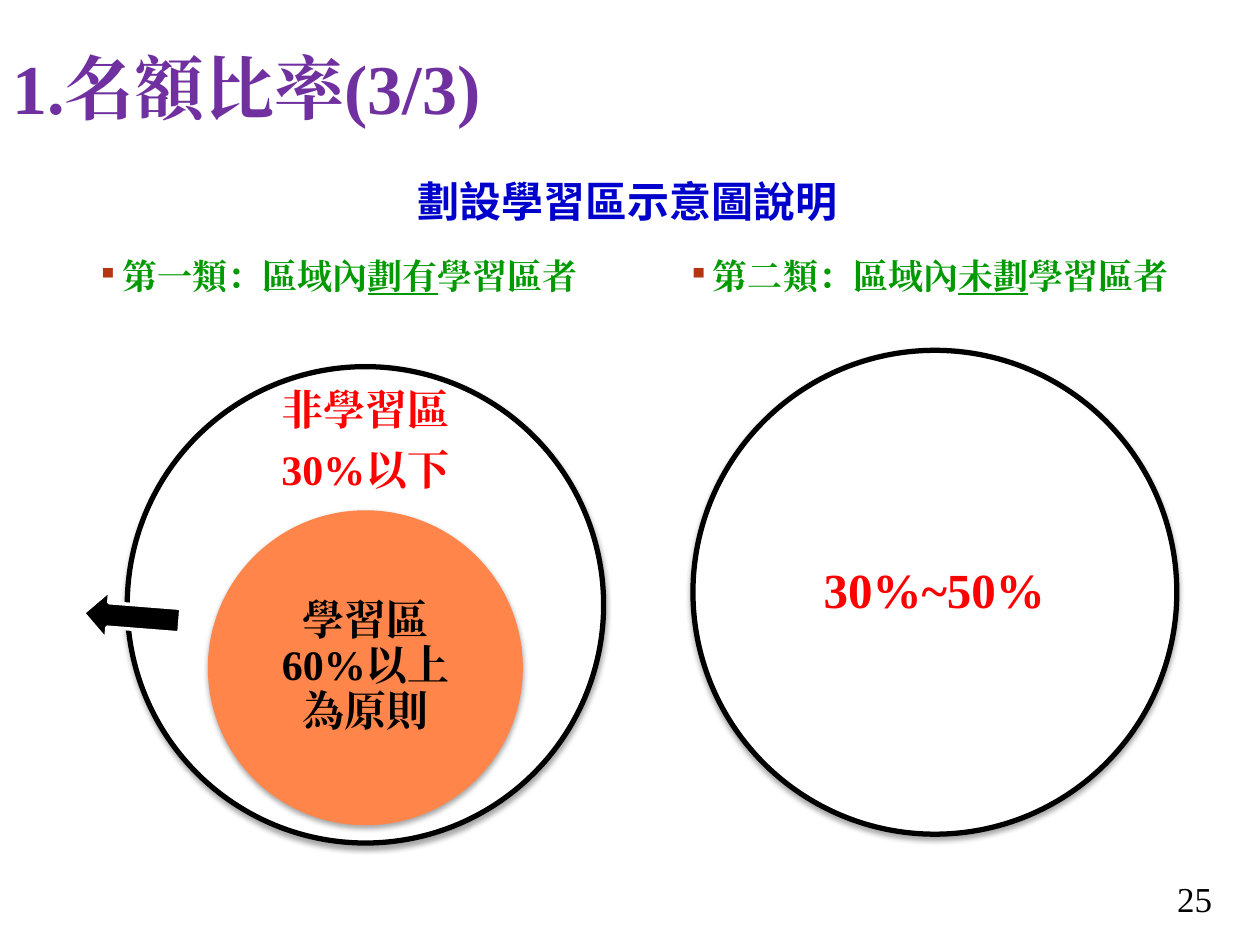
"""Build the slide that compares quota ratios with and without a learning zone."""
from lxml.etree import SubElement
from pptx import Presentation
from pptx.dml.color import RGBColor
from pptx.enum.shapes import MSO_SHAPE as Preset
from pptx.enum.text import MSO_ANCHOR as Anchor, MSO_AUTO_SIZE as AutoSize, PP_ALIGN as Align
from pptx.oxml.ns import qn
from pptx.util import Pt


def color(value):
    return RGBColor.from_string(value)


def add_text(box, paragraphs, size, ink, font="Times New Roman", bold=True, align=Align.LEFT,
             anchor=Anchor.MIDDLE, inset=None, spacing=0.9, before=0, after=0,
             underlined="", wrap=True, bullet=""):
    area = slide.shapes.add_textbox(*map(Pt, box))
    frame = area.text_frame
    frame.word_wrap = wrap
    frame.auto_size = AutoSize.NONE if wrap else AutoSize.SHAPE_TO_FIT_TEXT
    frame.vertical_anchor = anchor
    if inset is not None:
        frame.margin_left = frame.margin_right = Pt(inset)
        frame.margin_top = frame.margin_bottom = Pt(inset)
    for number, lines in enumerate(paragraphs):
        paragraph = frame.add_paragraph() if number else frame.paragraphs[0]
        paragraph.alignment = align
        paragraph.line_spacing = spacing
        paragraph.space_before, paragraph.space_after = Pt(before), Pt(after)
        if bullet:
            props = paragraph._p.get_or_add_pPr()
            props.set("marL", str(Pt(14.4)))
            props.set("indent", str(-Pt(14.4)))
            tint = SubElement(props, qn("a:buClr"))
            SubElement(tint, qn("a:srgbClr"), val="B53513")
            SubElement(props, qn("a:buSzPct"), val="85000")
            SubElement(props, qn("a:buChar"), char=bullet)
        for row, line in enumerate(lines.split("\n")):
            if row:
                paragraph.add_line_break()
            parts = line.partition(underlined) if underlined else (line,)
            for part in parts:
                run = paragraph.add_run()
                run.text = part
                run.font.size, run.font.bold, run.font.name = Pt(size), bold, font
                run.font.color.rgb = color(ink)
                if part == underlined:
                    run.font.underline = True
                SubElement(run._r.get_or_add_rPr(), qn("a:ea"), typeface=font)


def add_circle(left, top, diameter, fill, outlined=True):
    circle = slide.shapes.add_shape(Preset.OVAL, Pt(left), Pt(top), Pt(diameter), Pt(diameter))
    circle.fill.solid()
    circle.fill.fore_color.rgb = color(fill)
    if outlined:
        circle.line.color.rgb = color("000000")
        circle.line.width = Pt(3)
    else:
        circle.line.fill.background()
    circle.shadow.inherit = False
    effects = circle._element.spPr.find(qn("a:effectLst"))
    shadow = SubElement(effects, qn("a:outerShdw"), blurRad=str(Pt(3.1)), dist=str(Pt(1.8)),
                        dir="5400000", rotWithShape="0")
    shade = SubElement(shadow, qn("a:srgbClr"), val="000000")
    SubElement(shade, qn("a:alpha"), val="35000")


deck = Presentation()
deck.slide_width, deck.slide_height = Pt(720), Pt(540)
slide = deck.slides.add_slide(deck.slide_layouts[6])

for left, category, key_word in [(48.24, "第一類：區域內劃有學習區者", "劃有"),
                                 (385.92, "第二類：區域內未劃學習區者", "未劃")]:
    add_text((left, 126.72, 296.6, 64.8), [category], 20, "009900",
             before=12, underlined=key_word, bullet="▪")

ratio_style = {"align": Align.CENTER, "after": 8.4}
add_circle(72.7, 209.5, 272.2, "FFFFFF")
add_text((137.5, 229.7, 142.6, 46.1), ["非學習區", "30%以下"], 24, "FF0000",
         inset=13.7, **ratio_style)
add_circle(118.8, 291.6, 180, "FF854A", outlined=False)
add_text((145.4, 336.2, 127.4, 90), ["學習區\n60%以上\n為原則"], 24, "000000",
         inset=13.7, **ratio_style)

arrow = slide.shapes.add_shape(Preset.RIGHT_ARROW, Pt(47.5), Pt(338.4), Pt(55.4), Pt(28.1))
arrow.rotation = 184.5
arrow.fill.solid()
arrow.fill.fore_color.rgb = color("000000")
arrow.line.color.rgb = color("FFFFFF")
arrow.line.width = Pt(2)
arrow.shadow.inherit = False

add_circle(396, 200.2, 276.5, "FFFFFF")
add_text((436.3, 269.3, 195.1, 138.2), ["30%~50%"], 28, "FF0000", inset=15.8, **ratio_style)

add_text((231.8, 96.5, 257, 36), ["劃設學習區示意圖說明"], 24, "0000CC",
         font="Noto Sans CJK SC", anchor=Anchor.TOP, spacing=1.0, wrap=False)
add_text((0, 0, 720, 104.4), ["1.名額比率(3/3)"], 40, "7030A0")
add_text((537.8, 499, 162, 28.8), ["25"], 20, "000000",
         bold=False, align=Align.RIGHT, spacing=1.0)

deck.save("out.pptx")
